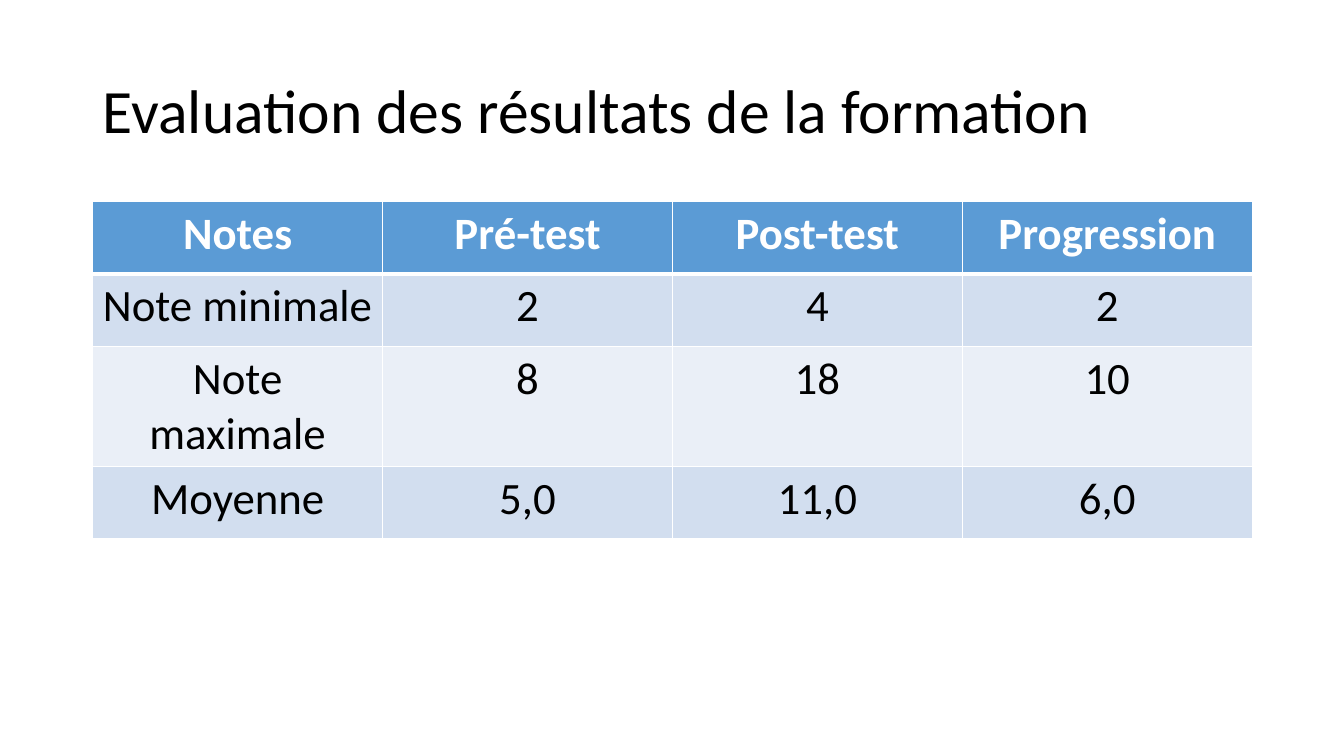
from dataclasses import dataclass

from lxml.etree import SubElement
from pptx import Presentation
from pptx.dml.color import RGBColor
from pptx.enum.text import MSO_ANCHOR, MSO_AUTO_SIZE, PP_ALIGN
from pptx.oxml.ns import qn
from pptx.util import Inches, Pt

FONT = "Calibri"
COLORS = {
    "black": "000000",
    "white": "FFFFFF",
    "header": "5B9BD5",
    "band_dark": "D2DEEF",
    "band_light": "EAEFF7",
}
LEFT, WIDTH = 0.92, 11.5
ROW_HEIGHT = 0.72
THIN, THICK = 1, 3


@dataclass
class ScoreRow:
    values: tuple[str, ...]
    fill: str
    color: str = "black"
    bold: bool = False
    top: int = THIN
    bottom: int = THIN


ROWS = [
    ScoreRow(("Notes", "Pré-test", "Post-test", "Progression"), "header",
             color="white", bold=True, bottom=THICK),
    ScoreRow(("Note minimale", "2", "4", "2"), "band_dark", top=THICK),
    ScoreRow(("Note maximale", "8", "18", "10"), "band_light"),
    ScoreRow(("Moyenne", "5,0", "11,0", "6,0"), "band_dark"),
]


def rgb(name: str) -> RGBColor:
    return RGBColor.from_string(COLORS[name])


def write_text(tf, text: str, *, size: int, color: str = "black", bold: bool = False,
               align=PP_ALIGN.LEFT, spacing: float = 1.0) -> None:
    p = tf.paragraphs[0]
    p.alignment = align
    p.line_spacing = spacing
    r = p.add_run()
    r.text = text
    r.font.name = FONT
    r.font.size = Pt(size)
    r.font.bold = bold
    r.font.color.rgb = rgb(color)


def set_borders(cell, top: int, bottom: int) -> None:
    """Draw white cell borders; call before filling, as the lines must come first."""
    tc_pr = cell._tc.get_or_add_tcPr()
    for side, width in (("L", THIN), ("R", THIN), ("T", top), ("B", bottom)):
        ln = SubElement(tc_pr, qn(f"a:ln{side}"), w=str(Pt(width)))
        fill = SubElement(ln, qn("a:solidFill"))
        SubElement(fill, qn("a:srgbClr"), val=COLORS["white"])


def add_title(s, text: str) -> None:
    title = s.shapes.title
    title.left, title.top = Inches(LEFT), Inches(0.4)
    title.width, title.height = Inches(WIDTH), Inches(1.45)
    tf = title.text_frame
    tf.word_wrap = True
    tf.auto_size = MSO_AUTO_SIZE.NONE
    tf.vertical_anchor = MSO_ANCHOR.MIDDLE
    write_text(tf, text, size=44, spacing=0.9)


def add_score_table(s, rows: list[ScoreRow]) -> None:
    n_cols = len(rows[0].values)
    table = s.shapes.add_table(len(rows), n_cols, Inches(LEFT), Inches(2),
                               Inches(WIDTH), Inches(ROW_HEIGHT * len(rows))).table
    for i, row in enumerate(rows):
        for j, value in enumerate(row.values):
            cell = table.cell(i, j)
            set_borders(cell, row.top, row.bottom)
            cell.fill.solid()
            cell.fill.fore_color.rgb = rgb(row.fill)
            write_text(cell.text_frame, value, size=32, color=row.color,
                       bold=row.bold, align=PP_ALIGN.CENTER)


def main() -> None:
    prs = Presentation()
    prs.slide_width, prs.slide_height = Inches(13.33), Inches(7.5)
    s = prs.slides.add_slide(prs.slide_layouts[5])
    add_title(s, "Evaluation des résultats de la formation")
    add_score_table(s, ROWS)
    prs.save("out.pptx")


if __name__ == "__main__":
    main()
